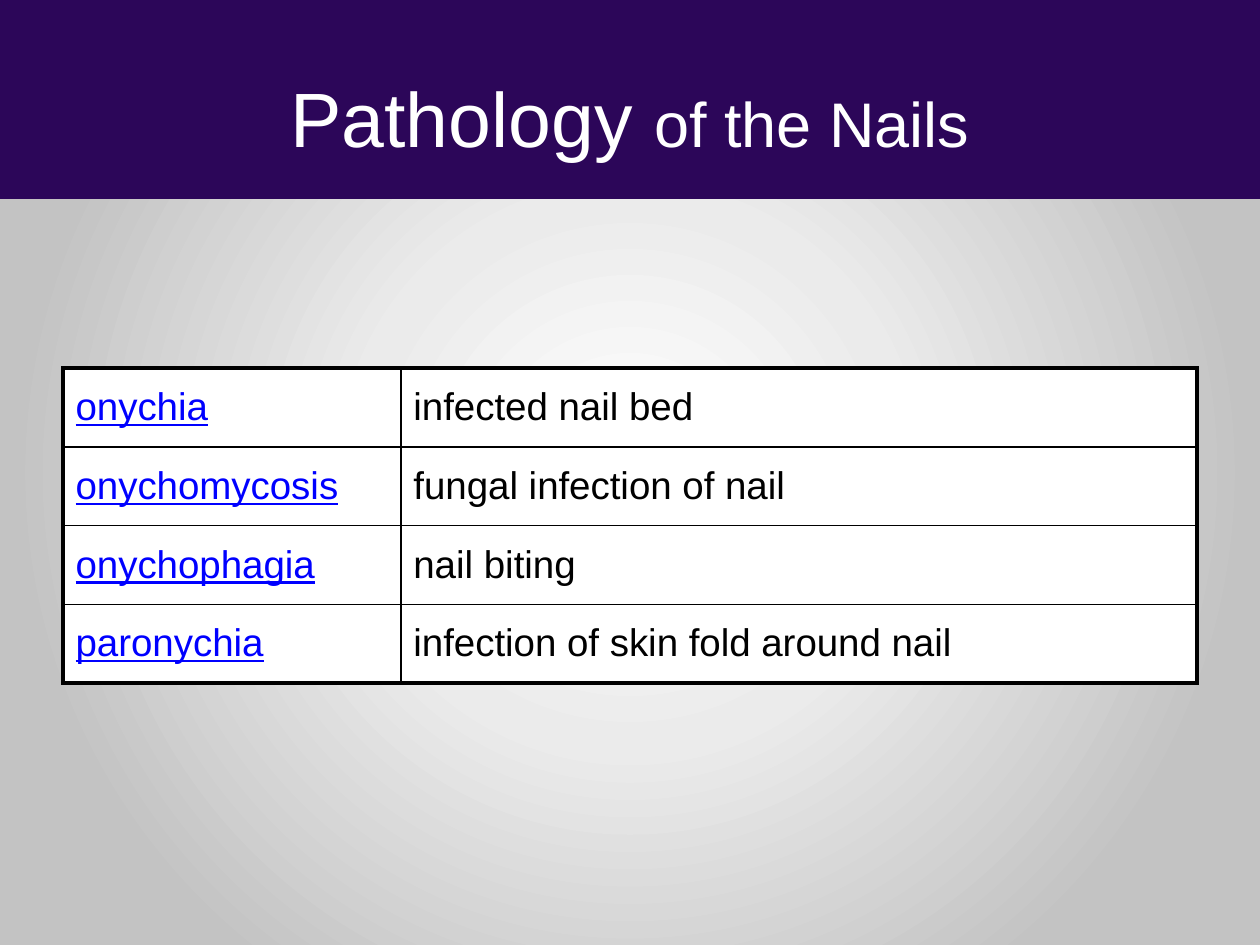
"""Build a slide with a table of nail disorders and their meanings."""
import pptx
import pptx.dml.color
import pptx.enum.shapes
import pptx.enum.text
import pptx.oxml
import pptx.oxml.ns
import pptx.util
from lxml import etree

Cm = pptx.util.Cm
Pt = pptx.util.Pt
qn = pptx.oxml.ns.qn


def rgb(color):
    return pptx.dml.color.RGBColor.from_string(color)


def add_run(p, text, size=22, color="000000", underline=False):
    r = p.add_run()
    r.text = text
    r.font.name = "Arial"
    r.font.size = Pt(size)
    r.font.color.rgb = rgb(color)
    r.font.underline = underline


prs = pptx.Presentation()
prs.slide_width, prs.slide_height = Cm(25.4), Cm(19.05)
s = prs.slides.add_slide(prs.slide_layouts[5])

s.background.fill.gradient()
grad = s.element.find(".//" + qn("a:gradFill"))
for child in list(grad):
    grad.remove(child)
stops = etree.SubElement(grad, qn("a:gsLst"))
for percent, color in [(2, "FFFFFF"), (35, "EBEBEB"), (79, "C3C3C3")]:
    stop = etree.SubElement(stops, qn("a:gs"), pos=str(percent * 1000))
    etree.SubElement(stop, qn("a:srgbClr"), val=color)
path = etree.SubElement(grad, qn("a:path"), path="circle")
etree.SubElement(path, qn("a:fillToRect"), l="50000", t="50000", r="50000", b="50000")

band = s.shapes.add_shape(pptx.enum.shapes.MSO_SHAPE.RECTANGLE, 0, 0, prs.slide_width, Cm(4.01))
band.shadow.inherit = False
band.fill.solid()
band.fill.fore_color.rgb = rgb("2C0659")
band.line.fill.background()

title = s.shapes.title
title.element.addprevious(band.element)
title.left, title.top, title.width, title.height = Cm(1.27), Cm(0.76), Cm(22.86), Cm(3.18)
tf = title.text_frame
tf.auto_size = pptx.enum.text.MSO_AUTO_SIZE.NONE
tf.vertical_anchor = pptx.enum.text.MSO_ANCHOR.MIDDLE
p = tf.paragraphs[0]
p.alignment = pptx.enum.text.PP_ALIGN.CENTER
add_run(p, "Pathology ", size=44, color="FFFFFF")
add_run(p, "of the Nails", size=36, color="FFFFFF")

terms = [
    ("onychia", "infected nail bed"),
    ("onychomycosis", "fungal infection of nail"),
    ("onychophagia", "nail biting"),
    ("paronychia", "infection of skin fold around nail"),
]
rows, cols = len(terms), 2
table = s.shapes.add_table(rows, cols, Cm(1.27), Cm(7.42), Cm(22.86), Cm(6.35)).table
table.first_row = table.horz_banding = False
table.columns[0].width, table.columns[1].width = Cm(6.81), Cm(16.05)

for i, term in enumerate(terms):
    for j, text in enumerate(term):
        cell = table.cell(i, j)
        cell.vertical_anchor = pptx.enum.text.MSO_ANCHOR.MIDDLE
        p = cell.text_frame.paragraphs[0]
        spacing = etree.SubElement(p._p.get_or_add_pPr(), qn("a:spcBef"))
        etree.SubElement(spacing, qn("a:spcPct"), val="20000")
        add_run(p, text, color="0000FF" if j == 0 else "000000", underline=j == 0)

        outer = {"a:lnL": j == 0, "a:lnR": j == cols - 1, "a:lnT": i == 0, "a:lnB": i == rows - 1}
        tc_pr = cell._tc.get_or_add_tcPr()
        for tag, is_outer in outer.items():
            ln = etree.SubElement(tc_pr, qn(tag), w=str(Pt(2.25 if is_outer else 1)))
            fill = etree.SubElement(ln, qn("a:solidFill"))
            etree.SubElement(fill, qn("a:srgbClr"), val="000000")
        cell.fill.solid()
        cell.fill.fore_color.rgb = rgb("FFFFFF")

prs.save("out.pptx")
